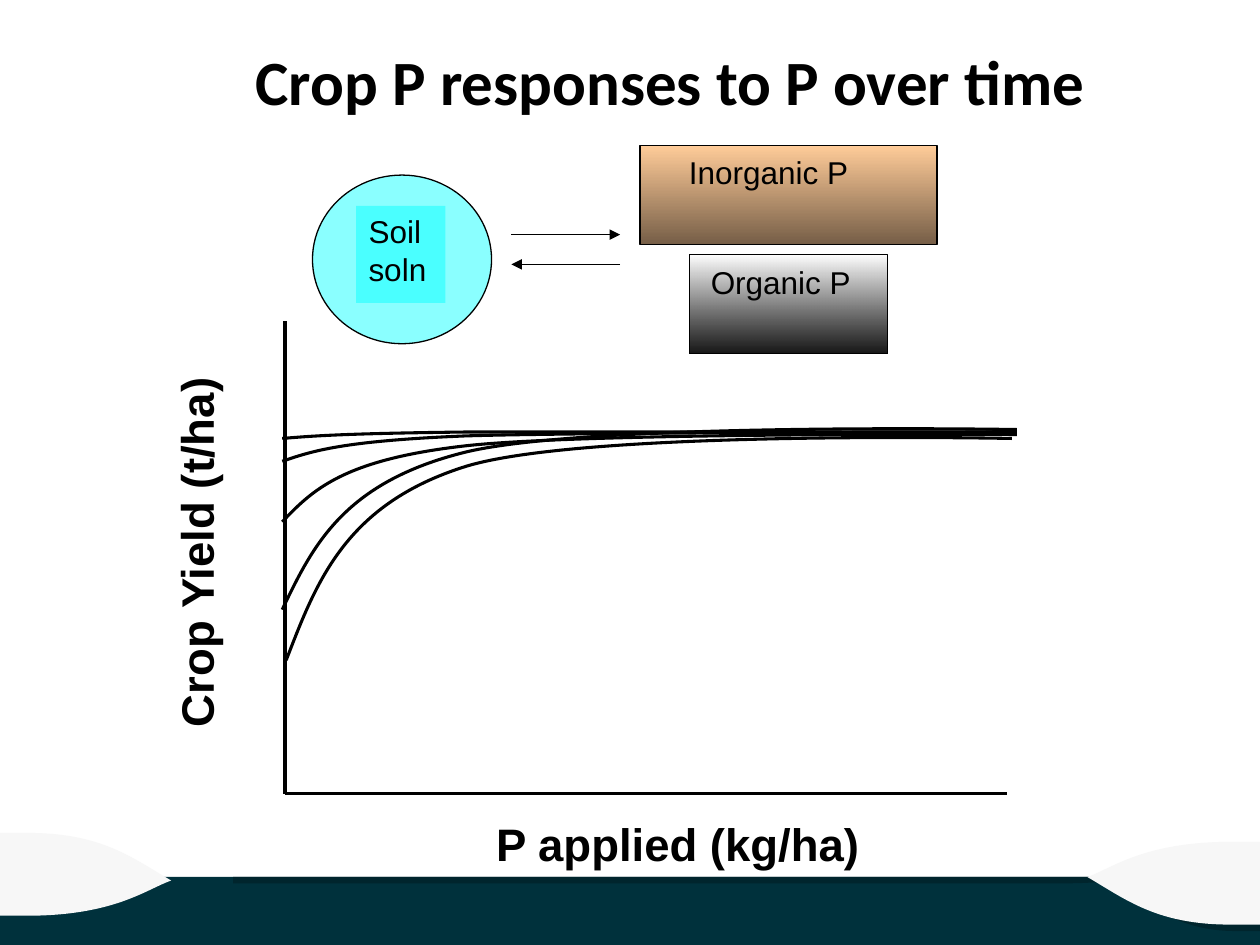
from lxml.etree import SubElement
from pptx import Presentation
from pptx.dml.color import RGBColor
from pptx.enum.shapes import MSO_CONNECTOR, MSO_SHAPE
from pptx.enum.text import MSO_ANCHOR, PP_ALIGN
from pptx.oxml.ns import qn
from pptx.util import Cm, Pt

BLACK, CYAN = "000000", "00FFFF"
TITLE = ("Crop P responses to P over time", (4.9, 0.73, 17.81, 1.8))

BAND = (0, 17.68, 25.4, 1.37)
BAND_SHADE = [
    [(22.58, 17.68), (4.7, 17.68), (4.7, 17.81), (21.16, 17.81),
     (22.07, 17.81, 22.38, 17.78, 22.58, 17.68)],
    [(25.4, 17.68), (22.58, 17.68), (23.06, 18.19, 23.7, 18.77, 24.92, 18.77),
     (25.4, 18.77), (25.4, 17.68)],
]
WAVE = [
    (24.84, 16.97), (23.06, 16.97, 22.43, 17.5, 21.92, 17.68),
    (22.71, 18.14, 23.32, 18.64, 24.82, 18.64),
    (25.4, 18.64), (25.4, 16.97),
]
WAVE_PLACES = [(21.92, 16.97, 0), (-0.03, 16.79, 180)]
YIELD_CURVES = [
    [(5.77, 13.31), (6.38, 11.73, 6.96, 10.16, 9.4, 9.4),
     (11.84, 8.66, 20.4, 8.84, 20.4, 8.84)],
    [(5.69, 12.29), (6.3, 11.02, 6.91, 9.73, 9.37, 9.12),
     (11.84, 8.51, 20.5, 8.66, 20.5, 8.66)],
    [(5.69, 10.52), (6.3, 9.88, 6.91, 9.27, 9.37, 8.99),
     (11.84, 8.71, 20.5, 8.76, 20.5, 8.76)],
    [(5.69, 9.3), (6.3, 9.09, 6.91, 8.89, 9.37, 8.79),
     (11.84, 8.71, 20.5, 8.71, 20.5, 8.71)],
    [(5.69, 8.84), (6.3, 8.79, 6.91, 8.74, 9.37, 8.71),
     (11.84, 8.71, 20.5, 8.71, 20.5, 8.71)],
]
AXES = [(5.75, 6.48, 5.75, 16), (5.75, 16, 20.3, 16)]
ARROWS = [(10.31, 4.73, 12.5, 4.73), (12.5, 5.33, 10.31, 5.33)]
AXIS_LABELS = [
    ("Crop Yield (t/ha)", (-0.08, 10.46, 8, 1.55), 270, (0.58, 0.25)),
    ("P applied (kg/ha)", (9.7, 16.31, 8.03, 1.42), 0, (0.3, 0.15)),
]
POOLS = [
    ("Organic P", (13.9, 5.13, 3.99, 2), (13.9, 5.18, 3.68, 1.12),
     ("FFFFFF", BLACK), 91),
    ("Inorganic P", (12.9, 2.93, 5.99, 2), (12.7, 2.97, 5.59, 1.12),
     ("FFCC99", "765E47"), 100),
]
SOIL_CIRCLE = (6.3, 3.53, 3.61, 3.4)
SOIL_LABEL = ("Soil\vsoln", (7.18, 4.15, 1.8, 1.96))


def rgb(value):
    return RGBColor.from_string(value)


def cm(values):
    return [Cm(v) for v in values]


def fade(s, value, percent):
    for c in s._element.spPr.iter(qn("a:srgbClr")):
        if c.get("val") == value:
            SubElement(c, qn("a:alpha")).set("val", str(percent * 1000))


def finish(s, fill=None, width=None):
    s.shadow.inherit = False
    if fill:
        s.fill.solid()
        s.fill.fore_color.rgb = rgb(fill)
    if width:
        s.line.color.rgb = rgb(BLACK)
        s.line.width = Pt(width)
    else:
        s.line.fill.background()
    return s


def write(s, text, size, font="Arial", bold=False, align=PP_ALIGN.LEFT):
    tf = s.text_frame
    tf.word_wrap = True
    tf.vertical_anchor = MSO_ANCHOR.TOP
    tf.text = text
    p = tf.paragraphs[0]
    p.alignment = align
    for r in p.runs:
        r.font.name, r.font.size, r.font.bold = font, Pt(size), bold
        r.font.color.rgb = rgb(BLACK)


def pairs(step):
    return [cm(step[i:i + 2]) for i in range(0, len(step), 2)]


def curved_shape(shapes, contours, closed):
    builder = shapes.build_freeform(*cm(contours[0][0]))
    for i, (start, *steps) in enumerate(contours):
        if i:
            builder.move_to(*cm(start))
        points = [point for step in steps for point in pairs(step)]
        builder.add_line_segments(points, close=closed)
    s = builder.convert_to_shape()
    path = next(s._element.iter(qn("a:path")))
    nodes = iter([n for n in path if n.tag != qn("a:close")])
    for contour in contours:
        for step in contour:
            node = next(nodes)
            if len(step) == 6:
                curve = path.makeelement(qn("a:cubicBezTo"))
                path.replace(node, curve)
                curve.append(node[0])
                for _ in range(2):
                    handle = next(nodes)
                    curve.append(handle[0])
                    path.remove(handle)
    return s


def connect(shapes, ends, width, arrow=False):
    s = shapes.add_connector(MSO_CONNECTOR.STRAIGHT, *cm(ends))
    s.line.color.rgb = rgb(BLACK)
    s.line.width = Pt(width)
    if arrow:
        SubElement(s.line._get_or_add_ln(), qn("a:tailEnd")).set("type", "triangle")
    SubElement(s._element.spPr, qn("a:effectLst"))


def main():
    prs = Presentation()
    prs.slide_width, prs.slide_height = cm((25.4, 19.05))
    shapes = prs.slides.add_slide(prs.slide_layouts[5]).shapes

    finish(shapes.add_shape(MSO_SHAPE.RECTANGLE, *cm(BAND)), "00313C")
    finish(curved_shape(shapes, BAND_SHADE, True), "00252D")
    for left, top, turn in WAVE_PLACES:
        s = finish(curved_shape(shapes, [WAVE], True), "F7F7F7")
        s.left, s.top, s.rotation = Cm(left), Cm(top), turn

    text, box = TITLE
    title = shapes.title
    title.left, title.top, title.width, title.height = cm(box)
    write(title, text, 36, "Calibri", True)

    for ends in AXES:
        connect(shapes, ends, 2)
    for text, box, turn, (inset, top) in AXIS_LABELS:
        s = shapes.add_textbox(*cm(box))
        s.rotation = turn
        write(s, text, 26, bold=True)
        tf = s.text_frame
        tf.margin_left, tf.margin_top, tf.margin_right = cm((inset, top, 0))
    for outline in YIELD_CURVES:
        s = finish(curved_shape(shapes, [outline], False), width=1.75)
        s.fill.background()

    s = finish(shapes.add_shape(MSO_SHAPE.OVAL, *cm(SOIL_CIRCLE)), CYAN, 0.75)
    fade(s, CYAN, 46)
    text, box = SOIL_LABEL
    s = finish(shapes.add_shape(MSO_SHAPE.RECTANGLE, *cm(box)), CYAN)
    fade(s, CYAN, 46)
    write(s, text, 18)

    for ends in ARROWS:
        connect(shapes, ends, 0.75, True)
    for text, box, text_box, colours, opacity in POOLS:
        s = shapes.add_shape(MSO_SHAPE.RECTANGLE, *cm(box))
        s.fill.gradient()
        s.fill.gradient_angle = 270
        for stop, colour in zip(s.fill.gradient_stops, colours):
            stop.color.rgb = rgb(colour)
        if opacity < 100:
            fade(s, colours[1], opacity)
        finish(s, width=0.75)
        write(shapes.add_textbox(*cm(text_box)), text, 18, align=PP_ALIGN.CENTER)

    prs.save("out.pptx")


if __name__ == "__main__":
    main()
